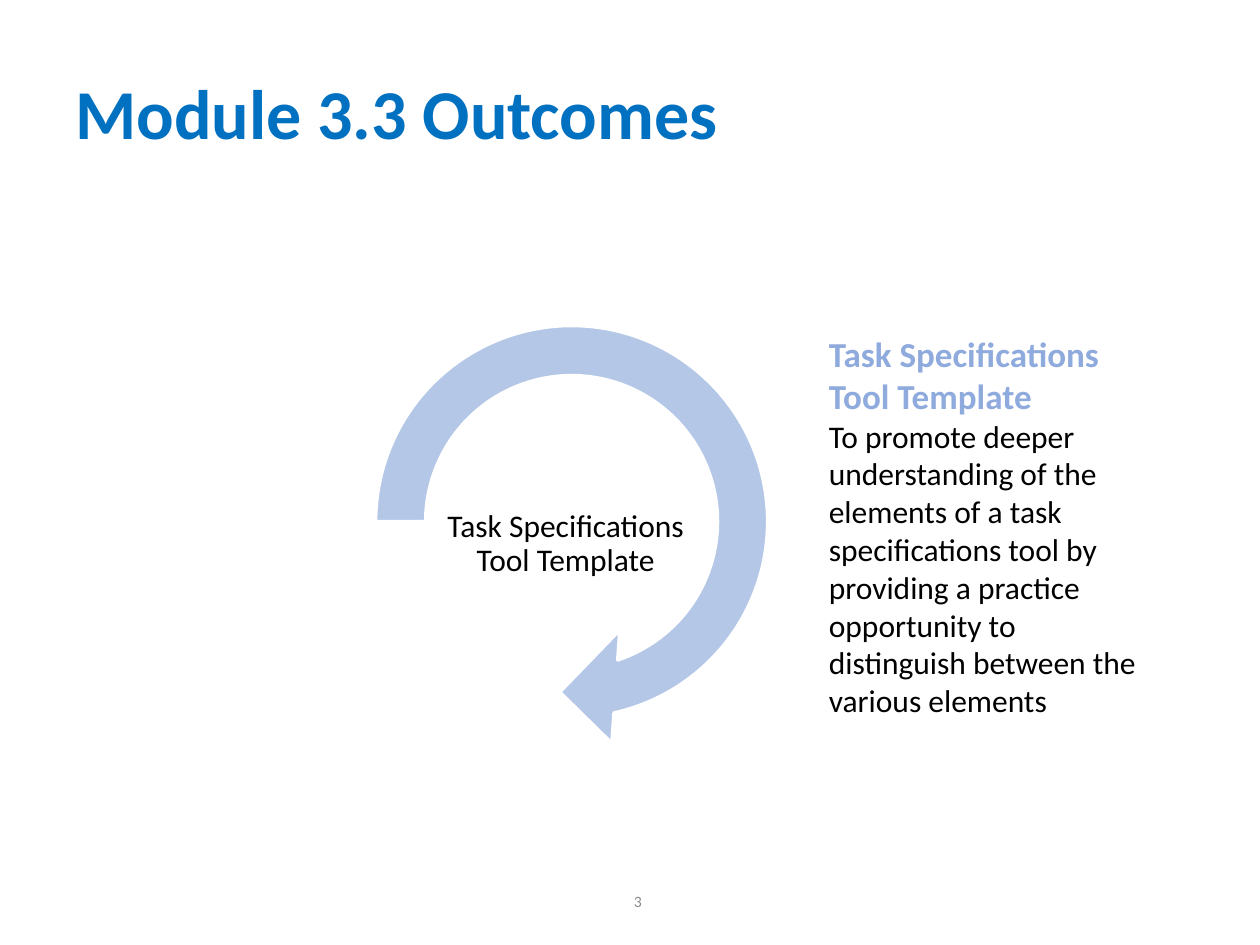
"""Build the Module 3.3 Outcomes slide with a circular arrow and its description."""
import pptx
import pptx.util
import pptx.dml.color
import pptx.enum.shapes
import pptx.enum.text

Cm, Pt = pptx.util.Cm, pptx.util.Pt
ALIGN = pptx.enum.text.PP_ALIGN
MIDDLE = pptx.enum.text.MSO_ANCHOR.MIDDLE
TOP = pptx.enum.text.MSO_ANCHOR.TOP

FONT = "Calibri"
TOOL = "Task Specifications Tool Template"
PURPOSE = (
    "To promote deeper understanding of the elements of a task specifications "
    "tool by providing a practice opportunity to distinguish between the "
    "various elements"
)
TITLE = [("Module 3.3 Outcomes", 40, "0070C0", True)]
TITLE_BOX = (1.27, 0.76, 22.86, 3.18)
ARROW_BOX = (6.93, 5.92, 9.19, 9.19)
ARROW_ADJUSTMENTS = (0.11, 11.42, 45, 108, 0.125)

TEXT_BOXES = [
    dict(box=(7.47, 17.65, 5.72, 1.02), lines=[("3", 9, "8C8C8C", False)],
         align=ALIGN.RIGHT, anchor=MIDDLE),
    dict(box=(8.84, 9.68, 5.13, 2.57), lines=[(TOOL, 18, "000000", False)],
         align=ALIGN.CENTER, anchor=MIDDLE, spacing=0.9, inset=0.03),
    dict(box=(16.46, 6.58, 7.09, 8.13),
         lines=[(TOOL, 20, "8FAADC", True), (PURPOSE, 18, "000000", False)],
         align=ALIGN.LEFT, anchor=TOP),
]


def paint(color_format, color):
    color_format.rgb = pptx.dml.color.RGBColor.from_string(color)


def write(sp, box, lines, align, anchor, spacing=None, inset=None):
    sp.left, sp.top, sp.width, sp.height = map(Cm, box)
    tf = sp.text_frame
    tf.word_wrap = True
    tf.auto_size = pptx.enum.text.MSO_AUTO_SIZE.NONE
    tf.vertical_anchor = anchor
    if inset is not None:
        tf.margin_left = tf.margin_right = Cm(inset)
        tf.margin_top = tf.margin_bottom = Cm(inset)
    tf.text = "\n".join(text for text, *_ in lines)
    for p, (_, size, color, bold) in zip(tf.paragraphs, lines):
        p.alignment = align
        p.line_spacing = spacing
        font = p.runs[0].font
        font.name, font.size, font.bold = FONT, Pt(size), bold
        paint(font.color, color)


def add_arrow(s):
    sp = s.shapes.add_shape(
        pptx.enum.shapes.MSO_SHAPE.CIRCULAR_ARROW, *map(Cm, ARROW_BOX))
    for i, value in enumerate(ARROW_ADJUSTMENTS):
        sp.adjustments[i] = value
    sp.shadow.inherit = False
    sp.fill.solid()
    paint(sp.fill.fore_color, "B4C7E7")
    paint(sp.line.color, "FFFFFF")
    sp.line.width = Pt(2)


def main():
    prs = pptx.Presentation()
    prs.slide_width, prs.slide_height = Cm(25.4), Cm(19.05)
    s = prs.slides.add_slide(prs.slide_layouts[5])
    write(s.shapes.title, TITLE_BOX, TITLE, ALIGN.LEFT, MIDDLE, spacing=0.9)
    add_arrow(s)
    for item in TEXT_BOXES:
        write(s.shapes.add_textbox(*map(Cm, item["box"])), **item)
    prs.save("out.pptx")


if __name__ == "__main__":
    main()
